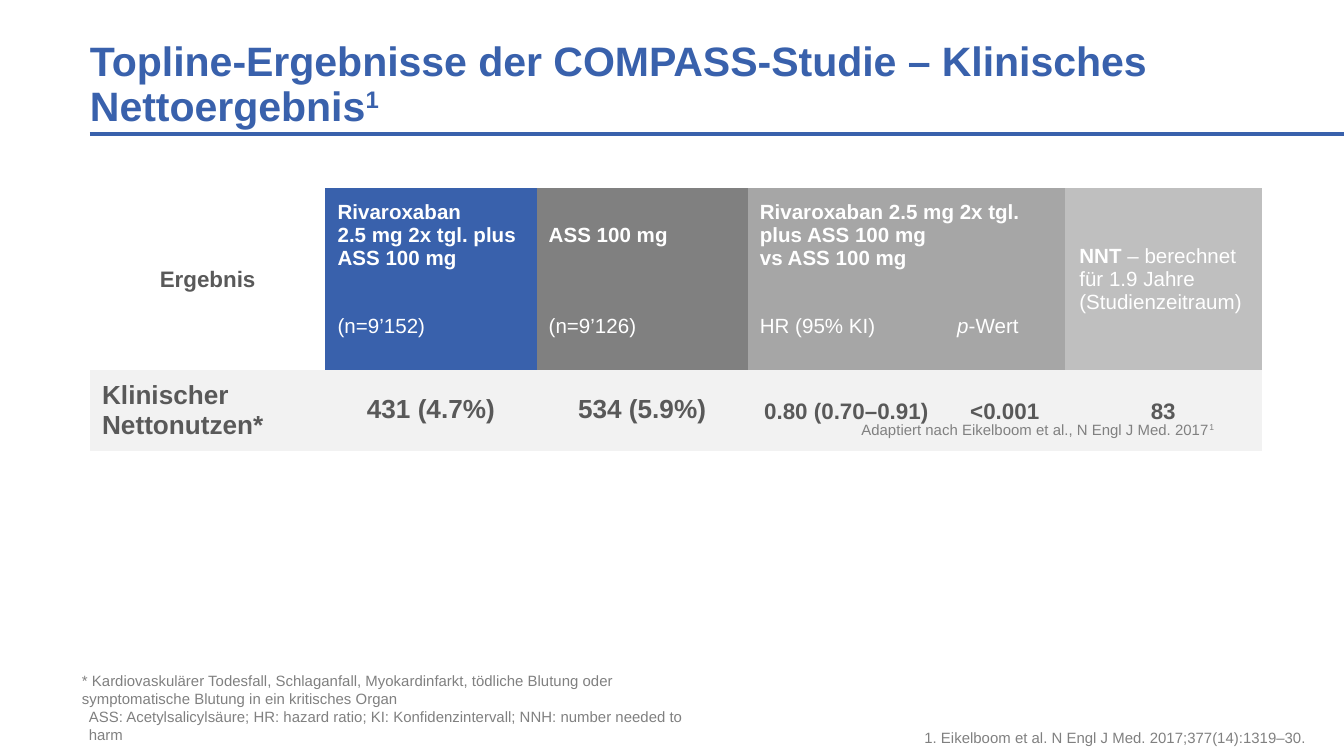
"""Build the slide with the clinical net benefit table of the COMPASS study."""
import copy
from dataclasses import dataclass

import lxml.etree
import pptx
import pptx.dml.color
import pptx.enum.shapes
import pptx.enum.text
import pptx.oxml.ns
import pptx.util

Cm = pptx.util.Cm
Pt = pptx.util.Pt
Align = pptx.enum.text.PP_ALIGN
Anchor = pptx.enum.text.MSO_ANCHOR
AutoSize = pptx.enum.text.MSO_AUTO_SIZE


@dataclass(frozen=True)
class Theme:
    font: str = "Arial"
    blue: str = "3961AC"
    white: str = "FFFFFF"
    text: str = "595959"
    gray: str = "808080"
    middle_gray: str = "A6A6A6"
    light_gray: str = "BFBFBF"
    pale_gray: str = "F2F2F2"
    title_size: int = 22
    large_size: int = 14
    label_size: int = 12
    header_size: int = 11
    note_size: int = 8
    plain_table: str = "{2D5ABB26-0587-4C30-8999-92F81FD0307C}"


@dataclass(frozen=True)
class Span:
    text: str
    bold: bool = False
    italic: bool = False
    raised: bool = False


@dataclass(frozen=True)
class Style:
    size: int
    color: str
    align: Align = Align.LEFT
    line_spacing: float | pptx.util.Length | None = None
    space_after: int = 0


@dataclass(frozen=True)
class TableCell:
    row: int
    column: int
    spans: tuple[Span, ...]
    style: Style
    fill: str | None
    margins: tuple[float, float, float, float] = (0.23, 0.13, 0.23, 0.13)
    last_row: int | None = None
    last_column: int | None = None


@dataclass(frozen=True)
class Note:
    place: tuple[float, float, float, float]
    spans: tuple[Span, ...]
    style: Style
    anchor: Anchor = Anchor.BOTTOM
    margins: tuple[float, float, float, float] = (0, 0, 0, 0)


THEME = Theme()
HEADER = Style(THEME.header_size, THEME.white)
LABEL = Style(THEME.label_size, THEME.text, Align.CENTER)
ROW_LABEL = Style(THEME.large_size, THEME.text)
COUNT = Style(THEME.large_size, THEME.text, Align.CENTER, Pt(15), 6)
VALUE = Style(THEME.label_size, THEME.text, Align.CENTER, Pt(15), 6)
NOTE = Style(THEME.note_size, THEME.gray)

COLUMN_WIDTHS = (4.45, 3.99, 3.99, 3.73, 2.26, 3.73)
ROW_HEIGHTS = (1.78, 1.55, 1.52)

HEADER_CELLS = (
    TableCell(0, 0, (Span("Ergebnis", bold=True),), LABEL, None, (0, 0.1, 0, 0.1), last_row=1),
    TableCell(0, 1, (Span("Rivaroxaban \n2.5 mg 2x tgl. plus ASS 100 mg", bold=True),), HEADER, THEME.blue),
    TableCell(0, 2, (Span("ASS 100 mg", bold=True),), HEADER, THEME.gray),
    TableCell(0, 3, (Span("Rivaroxaban 2.5 mg 2x tgl. plus ASS 100 mg \nvs ASS 100 mg", bold=True),),
              HEADER, THEME.middle_gray, last_column=4),
    TableCell(0, 5, (Span("NNT", bold=True), Span(" – berechnet für 1.9 Jahre (Studienzeitraum)")),
              HEADER, THEME.light_gray, (0.28, 0.13, 0.23, 0.13), last_row=1),
    TableCell(1, 1, (Span("(n=9’152)"),), HEADER, THEME.blue),
    TableCell(1, 2, (Span("(n=9’126)"),), HEADER, THEME.gray),
    TableCell(1, 3, (Span("HR (95% KI)"),), HEADER, THEME.middle_gray),
    TableCell(1, 4, (Span("p", italic=True), Span("-Wert")), HEADER, THEME.middle_gray),
    TableCell(2, 0, (Span("Klinischer Nettonutzen*", bold=True),), ROW_LABEL, THEME.pale_gray),
)
RESULTS = (("431 (4.7%)", COUNT), ("534 (5.9%)", COUNT), ("0.80 (0.70–0.91)", VALUE),
           ("<0.001", VALUE), ("83", VALUE))
RESULT_CELLS = tuple(
    TableCell(2, column, (Span(text, bold=True),), style, THEME.pale_gray, (0.18, 0, 0.18, 0))
    for column, (text, style) in enumerate(RESULTS, start=1))

NOTES = (
    Note((16.28, 7.95, 7.59, 0.99),
         (Span("Adaptiert nach Eikelboom et al., N Engl J Med. 2017"), Span("1", raised=True)),
         NOTE, Anchor.TOP),
    Note((15.09, 13.79, 9.6, 0.33),
         (Span("1. Eikelboom et al. N Engl J Med. 2017;377(14):1319–30."),),
         Style(THEME.note_size, THEME.gray, Align.RIGHT)),
    Note((1.68, 13.36, 11.61, 0.69),
         (Span("ASS: Acetylsalicylsäure; HR: hazard ratio; KI: Konfidenzintervall; "
               "NNH: number needed to harm"),), NOTE),
    Note((1.3, 12.57, 12.7, 0.94),
         (Span("* Kardiovaskulärer Todesfall, Schlaganfall, Myokardinfarkt, tödliche Blutung oder \n"
               "symptomatische Blutung in ein kritisches Organ"),),
         Style(THEME.note_size, THEME.gray, space_after=6), Anchor.TOP, (0.25, 0.13, 0.25, 0.13)),
)


def apply(target: object, formats: dict) -> None:
    for name, value in formats.items():
        setattr(target, name, value)


def margin_formats(margins: tuple[float, float, float, float]) -> dict:
    sides = ("margin_left", "margin_top", "margin_right", "margin_bottom")
    return {side: Cm(margin) for side, margin in zip(sides, margins)}


def write(frame: pptx.text.text.TextFrame, spans: tuple[Span, ...], style: Style) -> None:
    para = frame.paragraphs[0]
    apply(para, {"alignment": style.align, "line_spacing": style.line_spacing,
                 "space_before": Pt(0), "space_after": Pt(style.space_after)})
    for span in spans:
        for number, line in enumerate(span.text.split("\n")):
            if number:
                para.add_line_break()
            run = para.add_run()
            run.text = line
            apply(run.font, {"name": THEME.font, "size": Pt(style.size),
                             "bold": span.bold, "italic": span.italic})
            run.font.color.rgb = pptx.dml.color.RGBColor.from_string(style.color)
            properties = run._r.get_or_add_rPr()
            if span.raised:
                properties.set("baseline", "30000")
            if number:
                run._r.getprevious().append(copy.deepcopy(properties))


def draw_title(page: pptx.slide.Slide) -> None:
    title = page.shapes.title
    apply(title, {"left": Cm(1.7), "top": Cm(0.76), "width": Cm(23.01), "height": Cm(1.7)})
    apply(title.text_frame, {**margin_formats((0, 0, 0, 0)), "word_wrap": True,
                             "vertical_anchor": Anchor.BOTTOM,
                             "auto_size": AutoSize.SHAPE_TO_FIT_TEXT})
    spans = (Span("Topline-Ergebnisse der COMPASS-Studie – Klinisches Nettoergebnis", bold=True),
             Span("1", bold=True, raised=True))
    write(title.text_frame, spans, Style(THEME.title_size, THEME.blue, line_spacing=0.9))


def draw_rule(page: pptx.slide.Slide) -> None:
    rule = page.shapes.add_connector(pptx.enum.shapes.MSO_CONNECTOR.STRAIGHT,
                                     Cm(1.7), Cm(2.54), Cm(25.4), Cm(2.54))
    rule.line.width = Pt(2.25)
    rule.line.color.rgb = pptx.dml.color.RGBColor.from_string(THEME.blue)
    lxml.etree.SubElement(rule._element.spPr, pptx.oxml.ns.qn("a:effectLst"))


def draw_table(page: pptx.slide.Slide, cells: tuple[TableCell, ...]) -> None:
    table = page.shapes.add_table(len(ROW_HEIGHTS), len(COLUMN_WIDTHS), Cm(1.7), Cm(3.56),
                                  Cm(sum(COLUMN_WIDTHS)), Cm(sum(ROW_HEIGHTS))).table
    apply(table, {"first_row": False, "horz_banding": False})
    table._tbl.tblPr.find(pptx.oxml.ns.qn("a:tableStyleId")).text = THEME.plain_table
    for column, width in zip(table.columns, COLUMN_WIDTHS):
        column.width = Cm(width)
    for row, height in zip(table.rows, ROW_HEIGHTS):
        row.height = Cm(height)
    for item in cells:
        cell = table.cell(item.row, item.column)
        if item.last_row is not None or item.last_column is not None:
            cell.merge(table.cell(item.last_row or item.row, item.last_column or item.column))
        apply(cell, {**margin_formats(item.margins), "vertical_anchor": Anchor.MIDDLE})
        if item.fill:
            cell.fill.solid()
            cell.fill.fore_color.rgb = pptx.dml.color.RGBColor.from_string(item.fill)
        else:
            cell.fill.background()
        write(cell.text_frame, item.spans, item.style)


def draw_note(page: pptx.slide.Slide, note: Note) -> None:
    box = page.shapes.add_textbox(*map(Cm, note.place))
    apply(box.text_frame, {**margin_formats(note.margins), "word_wrap": True,
                           "vertical_anchor": note.anchor})
    write(box.text_frame, note.spans, note.style)


def main() -> None:
    deck = pptx.Presentation()
    apply(deck, {"slide_width": Cm(25.4), "slide_height": Cm(14.29)})
    page = deck.slides.add_slide(deck.slide_layouts.get_by_name("Title Only"))
    draw_rule(page)
    draw_title(page)
    draw_table(page, HEADER_CELLS + RESULT_CELLS)
    for note in NOTES:
        draw_note(page, note)
    deck.save("out.pptx")


if __name__ == "__main__":
    main()
